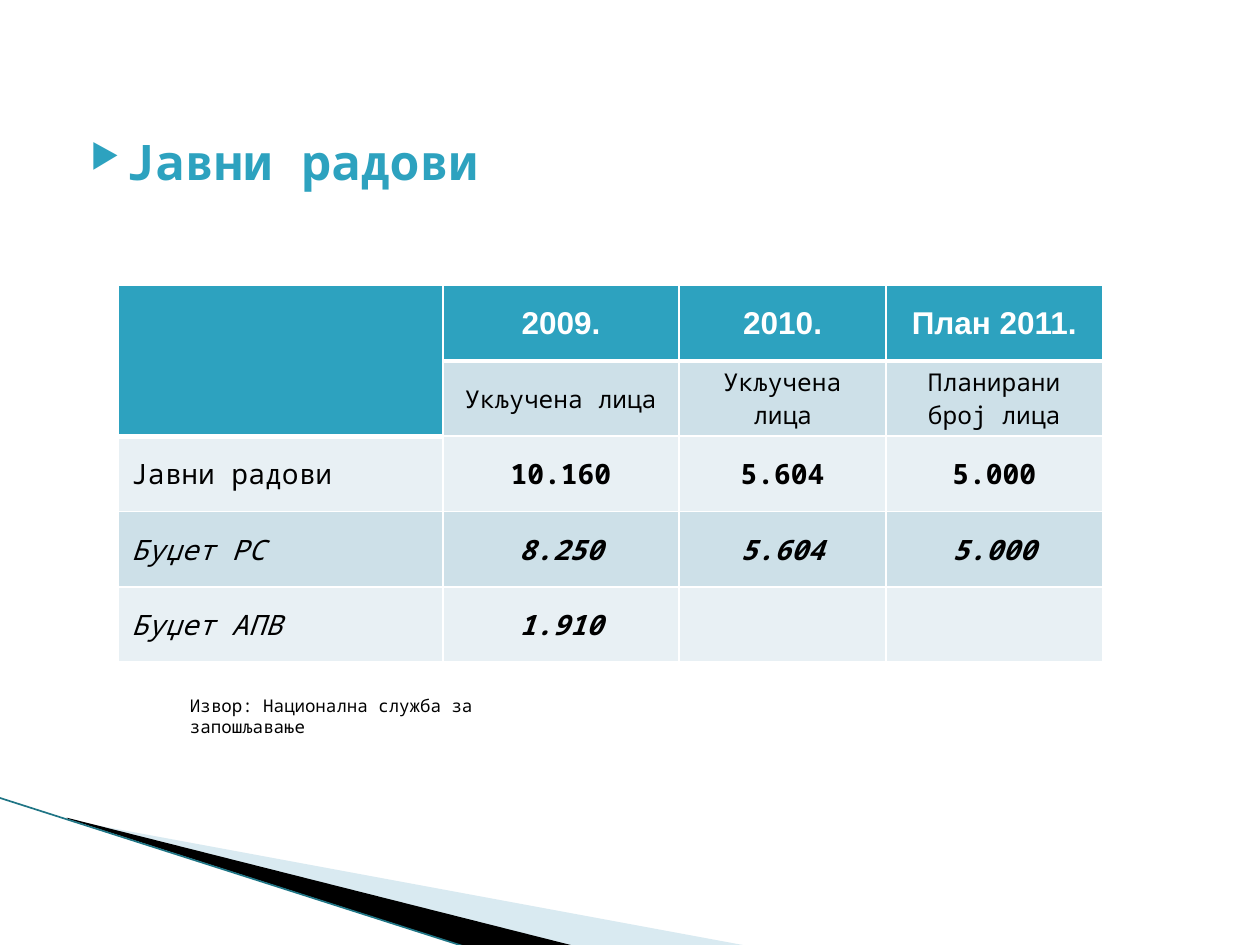
"""Build the public works slide: a bulleted heading, a table and a source note."""
from dataclasses import dataclass

from lxml.etree import SubElement
from pptx import Presentation
from pptx.dml.color import RGBColor
from pptx.enum.shapes import MSO_CONNECTOR
from pptx.enum.text import MSO_ANCHOR, PP_ALIGN
from pptx.oxml.ns import qn
from pptx.util import Emu, Inches, Pt

COLORS = {
    "accent": "2DA2BF",
    "band": "CDE0E8",
    "pale": "E8F0F4",
    "wedge": "A0CBDC",
    "edge": "1F7585",
    "white": "FFFFFF",
    "black": "000000",
}
GRID_COLS, GRID_ROWS = 100, 75
UNIT = Inches(0.1)
MONO, SANS, SYMBOL = "Noto Sans Mono", "Arial", "OpenSymbol"


@dataclass(frozen=True)
class Style:
    size: float
    font: str = MONO
    color: str = "black"
    bold: bool = False
    italic: bool = False


@dataclass(frozen=True)
class Box:
    col: float
    row: float
    cols: float
    rows: float


@dataclass(frozen=True)
class Row:
    texts: tuple[str, ...]
    fill: str
    label: Style
    value: Style
    inset: float = 0
    rule: float = 1


@dataclass(frozen=True)
class Wedge:
    frame: Box
    points: tuple[tuple[float, float], ...]
    color: str
    opacity: int = 100


HEAD = Style(18, SANS, "white", True)
SUBHEAD = Style(14)
ROWS = (
    Row(("", "2009.", "2010.", "План 2011."), "accent", HEAD, HEAD, 0.05, 3),
    Row(("", "Укључена лица", "Укључена лица", "Планирани број лица"),
        "band", SUBHEAD, SUBHEAD),
    Row(("Јавни радови", "10.160", "5.604", "5.000"), "pale", Style(16), Style(16, bold=True)),
    Row(("Буџет РС", "8.250", "5.604", "5.000"), "band",
        Style(16, italic=True), Style(16, bold=True, italic=True)),
    Row(("Буџет АПВ", "1.910", "", ""), "pale",
        Style(16, italic=True), Style(16, bold=True, italic=True)),
)
COLUMN_COLS = (25.75, 18.75, 16.43, 17.17)
WEDGES = (
    Wedge(Box(7.8, 54.7, 41.6, 15.8), ((5.5, 65.1), (59.5, 75.1), (45.6, 75.1), (5.5, 65)),
          "wedge", 40),
    Wedge(Box(-0.6, 63.3, 41.6, 9.2), ((5.3, 64.9), (45.7, 75.1), (37.2, 75.2), (5.4, 65)),
          "black"),
)


def grid(n: float) -> Emu:
    """Turn grid columns or rows into a length."""
    return Emu(round(n * UNIT))


def rgb(name: str) -> RGBColor:
    """Look up a named colour."""
    return RGBColor.from_string(COLORS[name])


def write(p, text: str, style: Style) -> None:
    """Set the text of a paragraph and format its run."""
    p.text = text
    for r in p.runs:
        r.font.size, r.font.name = Pt(style.size), style.font
        r.font.bold, r.font.italic = style.bold, style.italic
        r.font.color.rgb = rgb(style.color)


def set_frame(sp, box: Box) -> None:
    """Give a freeform a frame of its own while its outline stays in place."""
    dx, dy = sp.left - grid(box.col), sp.top - grid(box.row)
    sp.left, sp.top = grid(box.col), grid(box.row)
    sp.width, sp.height = grid(box.cols), grid(box.rows)
    outline = sp._element.spPr.find(".//" + qn("a:path"))
    outline.set("w", str(sp.width))
    outline.set("h", str(sp.height))
    for pt in outline.iter(qn("a:pt")):
        pt.set("x", str(int(pt.get("x")) + dx))
        pt.set("y", str(int(pt.get("y")) + dy))


def add_wedge(slide, wedge: Wedge) -> None:
    """Draw one filled corner wedge."""
    points = [(grid(x), grid(y)) for x, y in wedge.points]
    builder = slide.shapes.build_freeform(*points[0], scale=1.0)
    builder.add_line_segments(points[1:], close=True)
    sp = builder.convert_to_shape()
    set_frame(sp, wedge.frame)
    sp.shadow.inherit = False
    sp.line.fill.background()
    sp.fill.solid()
    sp.fill.fore_color.rgb = rgb(wedge.color)
    if wedge.opacity < 100:
        clr = sp._element.spPr.find(".//" + qn("a:srgbClr"))
        SubElement(clr, qn("a:alpha"), val=str(wedge.opacity * 1000))


def add_edge(slide) -> None:
    """Draw the thin line along the wedges."""
    line = slide.shapes.add_connector(
        MSO_CONNECTOR.STRAIGHT, grid(-0.1), grid(63.3), grid(37.1), grid(75.2))
    line.line.color.rgb = rgb("edge")
    line.line.width = Pt(0.95)
    SubElement(line._element.spPr, qn("a:effectLst"))


def add_text(slide, box: Box, text: str, style: Style):
    """Add a wrapping text box and return its text frame."""
    sp = slide.shapes.add_textbox(grid(box.col), grid(box.row), grid(box.cols), grid(box.rows))
    tf = sp.text_frame
    tf.word_wrap = True
    write(tf.paragraphs[0], text, style)
    return tf


def add_bullet(p, color: str) -> None:
    """Give a paragraph a hanging triangle bullet."""
    pPr = p._p.get_or_add_pPr()
    pPr.set("marL", str(grid(4)))
    pPr.set("indent", str(grid(-2.8)))
    SubElement(SubElement(pPr, qn("a:buClr")), qn("a:srgbClr"), val=COLORS[color])
    SubElement(pPr, qn("a:buSzPct"), val="68000")
    SubElement(pPr, qn("a:buFont"), typeface=SYMBOL)
    SubElement(pPr, qn("a:buChar"), char="▶")


def set_borders(cell, bottom: float, top: float) -> None:
    """Draw white rules on all sides of a cell."""
    tcPr = cell._tc.get_or_add_tcPr()
    widths = {"a:lnL": 1, "a:lnR": 1, "a:lnT": top, "a:lnB": bottom}
    for i, (tag, width) in enumerate(widths.items()):
        ln = SubElement(tcPr, qn(tag), w=str(Pt(width)))
        SubElement(SubElement(ln, qn("a:solidFill")), qn("a:srgbClr"), val=COLORS["white"])
        tcPr.insert(i, ln)


def add_table(slide, box: Box) -> None:
    """Add the table of persons included per year."""
    table = slide.shapes.add_table(
        len(ROWS), len(COLUMN_COLS), grid(box.col), grid(box.row),
        grid(box.cols), grid(box.rows)).table
    for column, cols in zip(table.columns, COLUMN_COLS):
        column.width = grid(cols)
    for i, row in enumerate(ROWS):
        table.rows[i].height = grid(box.rows / len(ROWS))
        for j, text in enumerate(row.texts):
            cell = table.cell(i, j)
            corner = j == 0 and i < 2
            cell.fill.solid()
            cell.fill.fore_color.rgb = rgb("accent" if corner else row.fill)
            cell.vertical_anchor = MSO_ANCHOR.MIDDLE
            p = cell.text_frame.paragraphs[0]
            write(p, text, row.value if j else row.label)
            if j:
                p.alignment = PP_ALIGN.CENTER
                cell.margin_left = cell.margin_right = Inches(0.07)
                cell.margin_top = cell.margin_bottom = Inches(row.inset)
            above = 3 if i == (1 if j else 2) else 1
            set_borders(cell, 3 if corner else row.rule, above)
    table.cell(0, 0).merge(table.cell(1, 0))


def main() -> None:
    """Compose and save the slide."""
    prs = Presentation()
    prs.slide_width, prs.slide_height = grid(GRID_COLS), grid(GRID_ROWS)
    s = prs.slides.add_slide(prs.slide_layouts[6])
    for wedge in WEDGES:
        add_wedge(s, wedge)
    add_edge(s)
    tf = add_text(s, Box(5, 4.7, 81.7, 18), "Јавни радови", Style(28, color="accent", bold=True))
    tf.margin_top = grid(5.75)
    add_bullet(tf.paragraphs[0], "accent")
    add_table(s, Box(9.4, 22.67, sum(COLUMN_COLS), 29.9))
    add_text(s, Box(14.1, 54.7, 33, 2.7), "Извор: Национална служба за запошљавање", Style(10))
    prs.save("out.pptx")


if __name__ == "__main__":
    main()
